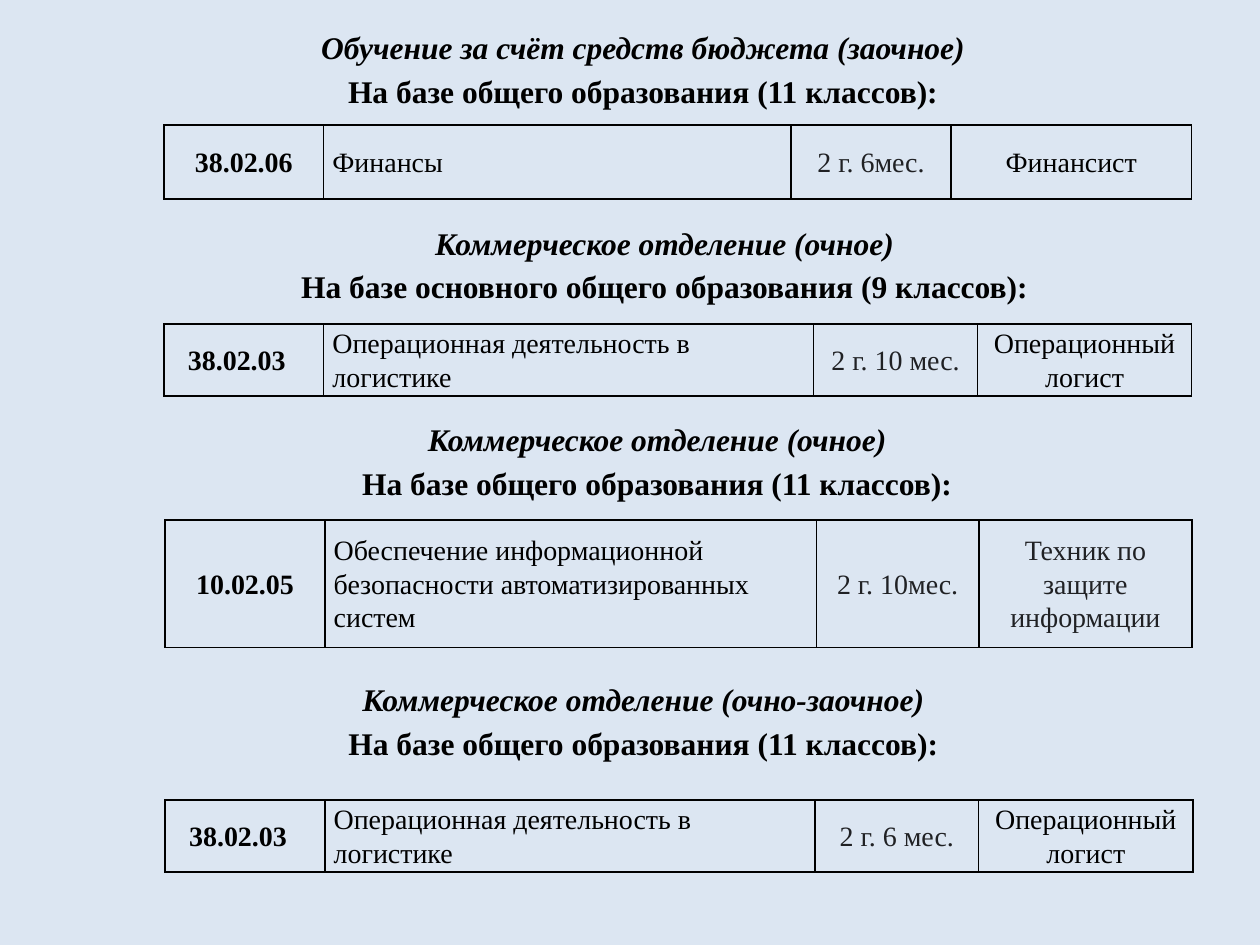
from pptx import Presentation
from pptx.dml.color import RGBColor
from pptx.enum import text as t
from pptx.oxml import parse_xml
from pptx.oxml.ns import nsdecls
from pptx.util import Pt

PALE = RGBColor(0xDC, 0xE6, 0xF2)
BLACK = RGBColor(0, 0, 0)
GREY = RGBColor(0x20, 0x21, 0x24)
FACE = "Times New Roman"
LEFT, MID = t.PP_ALIGN.LEFT, t.PP_ALIGN.CENTER
FULL = "На базе общего образования (11 классов):"
WIDE = (91.4, 280, 93.6, 122.4)
LOGIST = "Операционная деятельность в логистике"

# Each section: heading box, heading lines, first-line shift,
# table corner, row height, column widths, cell texts, code shift, job colour
PARTS = [
    ((127.5, 9.4, 480, 57.6),
     ("Обучение за счёт средств бюджета (заочное)", FULL), -9,
     (93.6, 71.3), 42.5, (91.4, 267.1, 91.4, 137.5),
     ("38.02.06", "Финансы", "2 г. 6мес.", "Финансист"), 0, BLACK),
    ((93.6, 121, 572.4, 57.6),
     ("Коммерческое отделение (очное)",
      "На базе основного общего образования (9 классов):"), 0,
     (93.6, 185.2), 39.6, WIDE,
     ("38.02.03", LOGIST, "2 г. 10 мес.", "Операционный логист"), 8, BLACK),
    ((195.6, 233.3, 360, 57.6),
     ("Коммерческое отделение (очное)", FULL), 0,
     (94.3, 297.2), 72.7, (91.4, 280.8, 92.9, 121.7),
     ("10.02.05",
      "Обеспечение информационной безопасности автоматизированных систем",
      "2 г. 10мес.", "Техник по защите информации"), 0, GREY),
    ((187.7, 382.1, 360, 57.6),
     ("Коммерческое отделение (очно-заочное)", FULL), 0,
     (94.3, 457.2), 39.6, WIDE,
     ("38.02.03", LOGIST, "2 г. 6 мес.", "Операционный логист"), 8, BLACK),
]


def set_all(obj, form):
    for key, val in form.items():
        setattr(obj, key, val)


def write(para, words, align, space, color, **form):
    set_all(para, {"alignment": align, "line_spacing": space})
    run = para.add_run()
    run.text = words
    set_all(run.font, {"name": FACE, **form})
    run.font.color.rgb = color


def add_head(slide, box, lines, shift):
    """Two centred lines: italic form of study, then entry level."""
    frame = slide.shapes.add_textbox(*map(Pt, box)).text_frame
    set_all(frame, {"word_wrap": True,
                    "auto_size": t.MSO_AUTO_SIZE.SHAPE_TO_FIT_TEXT})
    first, second = frame.paragraphs[0], frame.add_paragraph()
    for para, words in zip((first, second), lines):
        write(para, words, MID, 1.15, BLACK,
              size=Pt(18), bold=True, italic=para is first)
    if shift:
        first._p.get_or_add_pPr().set("indent", str(Pt(shift)))


def add_edges(cell):
    """Thin black line on all four sides, ahead of the fill."""
    props = cell._tc.get_or_add_tcPr()
    for spot, side in enumerate("LRTB"):
        props.insert(spot, parse_xml(
            f'<a:ln{side} {nsdecls("a")} w="{Pt(1)}"><a:solidFill>'
            f'<a:srgbClr val="{BLACK}"/></a:solidFill></a:ln{side}>'))


def add_row(slide, spot, high, cols, words, shift, tint):
    """One-row table: code, course, length of study, job."""
    frame = slide.shapes.add_table(
        1, len(cols), *map(Pt, (*spot, sum(cols), high)))
    table = frame.table
    set_all(table, {"first_row": False, "horz_banding": False})
    table.rows[0].height = Pt(high)
    looks = zip(cols, words, (MID, LEFT, MID, MID),
                (BLACK, BLACK, GREY, tint))
    for num, (wide, label, align, color) in enumerate(looks):
        table.columns[num].width = Pt(wide)
        cell = table.cell(0, num)
        extra = 0 if num else shift
        set_all(cell, {"margin_left": Pt(5), "margin_right": Pt(5 + extra),
                       "margin_top": 0, "margin_bottom": 0,
                       "vertical_anchor": t.MSO_ANCHOR.MIDDLE})
        cell.fill.background()
        add_edges(cell)
        write(cell.text_frame.paragraphs[0], label, align, 1.07, color,
              size=Pt(16), bold=num == 0)


def main():
    deck = Presentation()
    set_all(deck, {"slide_width": Pt(720), "slide_height": Pt(540)})
    slide = deck.slides.add_slide(deck.slide_layouts[6])
    fill = slide.background.fill
    fill.solid()
    fill.fore_color.rgb = PALE
    for box, lines, shift, *row in PARTS:
        add_head(slide, box, lines, shift)
        add_row(slide, *row)
    deck.save("out.pptx")


if __name__ == "__main__":
    main()
